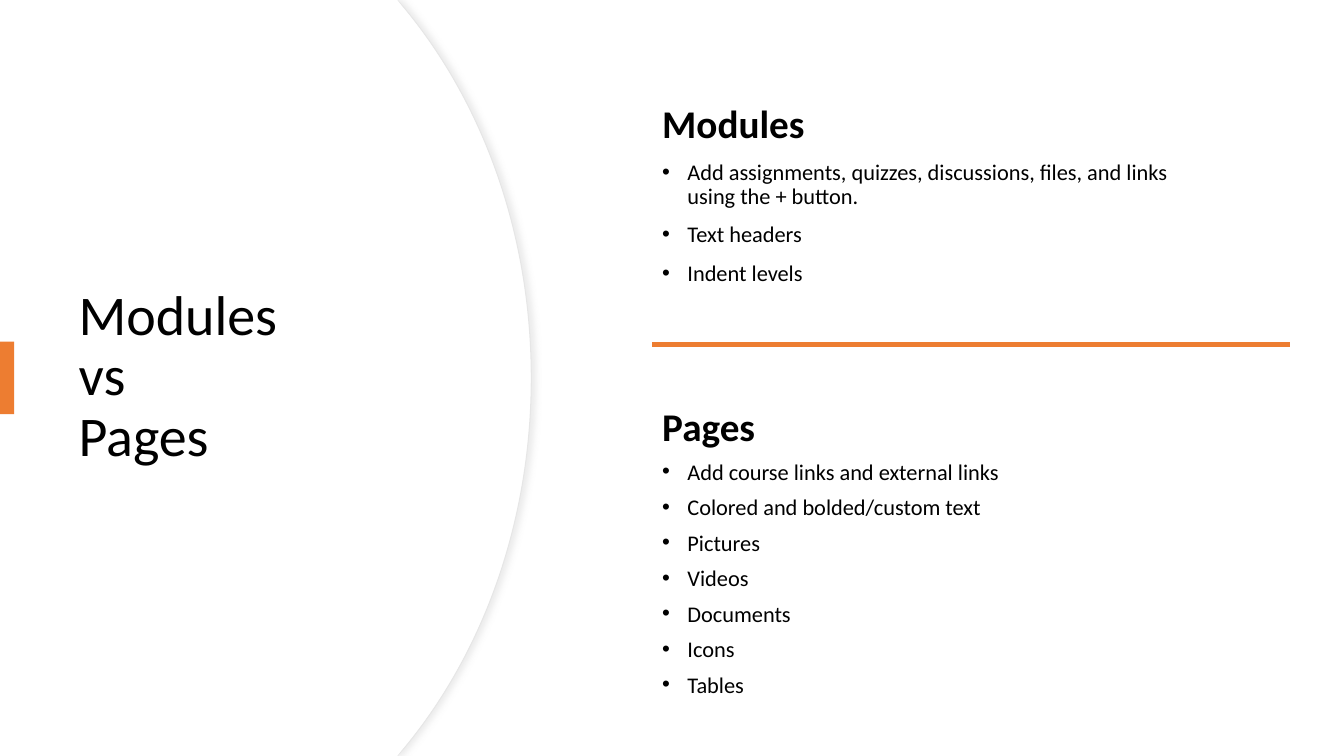
from dataclasses import dataclass

from lxml.etree import SubElement
from pptx import Presentation
from pptx.dml.color import RGBColor
from pptx.enum.shapes import MSO_CONNECTOR, MSO_SHAPE
from pptx.enum.text import MSO_ANCHOR
from pptx.oxml.ns import qn
from pptx.util import Cm, Pt

COLORS = {
    "paper": "FFFFFF",
    "edge": "E6E6E6",
    "shade": "D9D9D9",
    "ink": "000000",
    "accent": "ED7D31",
}
FONT = "Calibri"
HEIGHT = 19.05
TITLE = {"size": Pt(40), "bold": False}
HEADING = {"size": Pt(28), "bold": True}
ITEM = {"size": Pt(16), "bold": False}


@dataclass
class Disc:
    inset: float
    outlined: bool


@dataclass
class Section:
    top: float
    height: float
    spacing: float
    heading: str
    items: list[str]


DISCS = [Disc(0, True), Disc(0.03, False)]
SECTIONS = [
    Section(10.24, 7.8, 0.8, "Pages", [
        "Add course links and external links",
        "Colored and bolded/custom text",
        "Pictures",
        "Videos",
        "Documents",
        "Icons",
        "Tables",
    ]),
    Section(2.52, 5.36, 0.9, "Modules", [
        "Add assignments, quizzes, discussions, files, and links using the + button.",
        "Text headers",
        "Indent levels",
    ]),
]


def rgb(name: str) -> RGBColor:
    return RGBColor.from_string(COLORS[name])


def disc_points(inset: float) -> list[tuple[int, int]]:
    right = 13.39 - inset
    upper = [(10.01, 0), (10.19 - inset, 0.2), (12.17 - inset, 2.59), (right, 5.89)]
    lower = [(x, HEIGHT - y) for x, y in reversed(upper)]
    points = upper + [(right, HEIGHT / 2)] + lower + [(0, HEIGHT)]
    return [(Cm(x), Cm(y)) for x, y in points]


def bend(sp, starts: tuple[int, ...]) -> None:
    lines = list(sp._element.spPr.iter(qn("a:lnTo")))
    for start in starts:
        curve = SubElement(lines[start].getparent(), qn("a:cubicBezTo"))
        lines[start].addprevious(curve)
        for line in lines[start:start + 3]:
            curve.append(line[0])
            line.getparent().remove(line)


def add_disc(slide, disc: Disc) -> None:
    builder = slide.shapes.build_freeform(0, 0)
    builder.add_line_segments(disc_points(disc.inset), close=True)
    sp = builder.convert_to_shape()
    bend(sp, (2, 5))
    sp.shadow.inherit = False
    sp.fill.solid()
    sp.fill.fore_color.rgb = rgb("paper")
    if not disc.outlined:
        sp.line.fill.background()
        return
    sp.line.color.rgb = rgb("edge")
    sp.line.width = Pt(0.75)
    effects = sp._element.spPr.find(qn("a:effectLst"))
    shadow = SubElement(effects, qn("a:outerShdw"), blurRad=str(Pt(4)),
                        dist=str(Pt(3)), dir="0", algn="l", rotWithShape="0")
    color = SubElement(shadow, qn("a:srgbClr"), val=COLORS["shade"])
    SubElement(color, qn("a:alpha"), val="50000")


def add_accent(slide) -> None:
    sp = slide.shapes.add_shape(MSO_SHAPE.RECTANGLE, 0, Cm(8.61), Cm(0.36), Cm(1.83))
    sp.shadow.inherit = False
    sp.fill.solid()
    sp.fill.fore_color.rgb = rgb("accent")
    sp.line.fill.background()


def add_frame(slide, left: float, top: float, width: float, height: float):
    tf = slide.shapes.add_textbox(Cm(left), Cm(top), Cm(width), Cm(height)).text_frame
    tf.word_wrap = True
    return tf


def write(p, text: str, spacing: float, style: dict) -> None:
    p.text = text
    p.line_spacing = spacing
    for r in p.runs:
        for name, value in {"name": FONT, **style}.items():
            setattr(r.font, name, value)
        r.font.color.rgb = rgb("ink")


def add_bullet(p) -> None:
    pPr = p._p.get_or_add_pPr()
    pPr.set("marL", str(Cm(0.635)))
    pPr.set("indent", str(-Cm(0.635)))
    SubElement(pPr, qn("a:buFont"), typeface="Arial")
    SubElement(pPr, qn("a:buChar"), char="•")


def add_section(slide, section: Section) -> None:
    tf = add_frame(slide, 16.44, section.top, 14.4, section.height)
    heading = tf.paragraphs[0]
    write(heading, section.heading, section.spacing, HEADING)
    heading.space_before = Pt(10)
    for item in section.items:
        p = tf.add_paragraph()
        write(p, item, section.spacing, ITEM)
        p.space_before = Pt(10)
        add_bullet(p)


def add_divider(slide) -> None:
    line = slide.shapes.add_connector(
        MSO_CONNECTOR.STRAIGHT, Cm(16.44), Cm(8.68), Cm(32.5), Cm(8.68))
    line.line.color.rgb = rgb("accent")
    line.line.width = Pt(3)
    SubElement(line._element.spPr, qn("a:effectLst"))


def main() -> None:
    prs = Presentation()
    prs.slide_width, prs.slide_height = Cm(33.87), Cm(HEIGHT)
    slide = prs.slides.add_slide(prs.slide_layouts[6])
    for disc in DISCS:
        add_disc(slide, disc)
    title = add_frame(slide, 1.73, 3.23, 10.01, 12.57)
    title.vertical_anchor = MSO_ANCHOR.MIDDLE
    write(title.paragraphs[0], "Modules\vvs\vPages", 0.9, TITLE)
    add_accent(slide)
    for section in SECTIONS:
        add_section(slide, section)
    add_divider(slide)
    prs.save("out.pptx")


if __name__ == "__main__":
    main()
